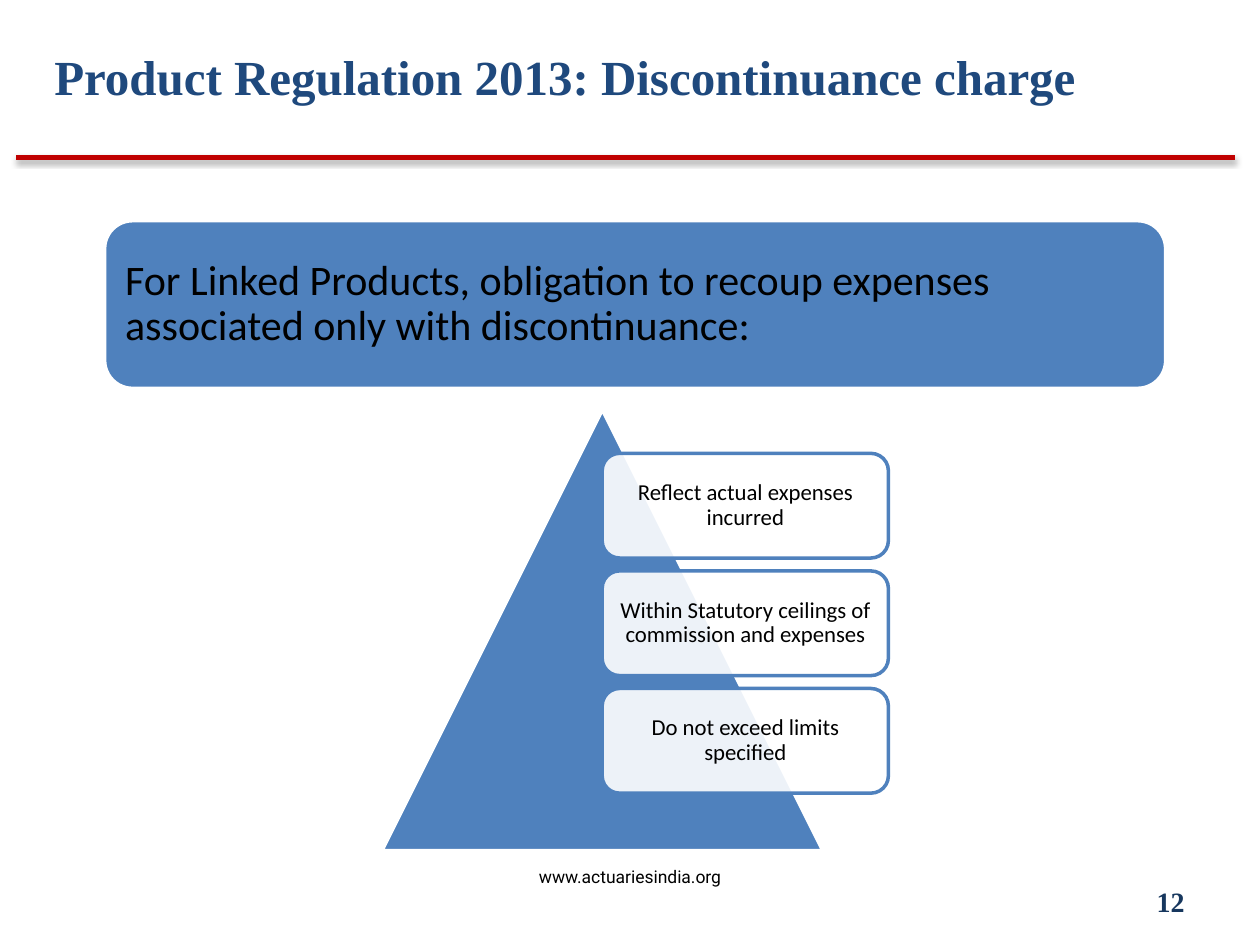
"""Build the slide on discontinuance charges under Product Regulation 2013."""
import pptx
import pptx.dml.color
import pptx.enum.shapes
import pptx.enum.text
import pptx.oxml
import pptx.oxml.ns
import pptx.util

Cm, Pt = pptx.util.Cm, pptx.util.Pt
SHAPE = pptx.enum.shapes.MSO_SHAPE
ALIGN = pptx.enum.text.PP_ALIGN
qn = pptx.oxml.ns.qn

HEADING = "Product Regulation 2013: Discontinuance charge"
OBLIGATION = ("For Linked Products, obligation to recoup expenses "
              "associated only with discontinuance:")
CONDITIONS = [
    "Reflect actual expenses incurred",
    "Within Statutory ceilings of commission and expenses",
    "Do not exceed limits specified",
]
WEBSITE = "www.actuariesindia.org"
PAGE = "12"

COLORS = {"blue": "4F81BD", "white": "FFFFFF", "black": "000000",
          "rule": "C00000", "heading": "1F497D", "page": "17375E"}
CARD_LEFT, CARD_TOP, CARD_WIDTH, CARD_HEIGHT, CARD_GAP = 12.14, 9.14, 5.77, 2.11, 0.26
SHADOW = (
    f'<a:effectLst {pptx.oxml.ns.nsdecls("a")}>'
    '<a:outerShdw blurRad="39370" dist="20320" dir="5400000" rotWithShape="0">'
    '<a:srgbClr val="000000"><a:alpha val="38000"/></a:srgbClr>'
    '</a:outerShdw></a:effectLst>'
)


def rgb(name):
    return pptx.dml.color.RGBColor.from_string(COLORS[name])


def write(holder, text, size, font="Calibri", color="black", bold=False,
          align=ALIGN.LEFT, spacing=None, inset=None):
    frame = holder.text_frame
    frame.word_wrap = True
    frame.auto_size = pptx.enum.text.MSO_AUTO_SIZE.NONE
    frame.vertical_anchor = pptx.enum.text.MSO_ANCHOR.MIDDLE
    if inset is not None:
        frame.margin_left = frame.margin_right = Cm(inset)
        frame.margin_top = frame.margin_bottom = Cm(inset)
    paragraph = frame.paragraphs[0]
    paragraph.alignment = align
    paragraph.line_spacing = spacing
    run = paragraph.add_run()
    run.text = text
    run.font.name, run.font.size, run.font.bold = font, Pt(size), bold
    run.font.color.rgb = rgb(color)


def add_block(slide, kind, box, fill, line, opacity=None):
    block = slide.shapes.add_shape(kind, *map(Cm, box))
    block.shadow.inherit = False
    block.fill.solid()
    block.fill.fore_color.rgb = rgb(fill)
    block.line.color.rgb = rgb(line)
    block.line.width = Pt(2)
    if opacity is not None:
        fill_color = block.fill._xPr.find(qn("a:solidFill"))[0]
        fill_color.append(pptx.oxml.parse_xml(
            f'<a:alpha {pptx.oxml.ns.nsdecls("a")} val="{opacity * 1000}"/>'))
    return block


def main():
    deck = pptx.Presentation()
    deck.slide_width, deck.slide_height = Cm(25.4), Cm(19.05)
    slide = deck.slides.add_slide(deck.slide_layouts[5])

    heading = slide.shapes.title
    heading.left, heading.top, heading.width, heading.height = map(
        Cm, (0.84, -0.05, 22.86, 3.18))
    write(heading, HEADING, 28, font="Times New Roman", color="heading", bold=True)

    rule = slide.shapes.add_connector(
        pptx.enum.shapes.MSO_CONNECTOR.STRAIGHT, *map(Cm, (0.33, 3.18, 24.89, 3.18)))
    rule.line.color.rgb = rgb("rule")
    rule.line.width = Pt(3)
    rule._element.spPr.append(pptx.oxml.parse_xml(SHADOW))

    add_block(slide, SHAPE.ISOSCELES_TRIANGLE, (7.7, 8.26, 8.89, 8.89), "blue", "white")
    for index, condition in enumerate(CONDITIONS):
        top = CARD_TOP + index * (CARD_HEIGHT + CARD_GAP)
        card = add_block(slide, SHAPE.ROUNDED_RECTANGLE,
                         (CARD_LEFT, top, CARD_WIDTH, CARD_HEIGHT),
                         "white", "blue", opacity=90)
        write(card, condition, 13, align=ALIGN.CENTER, spacing=0.9, inset=0.13)

    obligation = add_block(slide, SHAPE.ROUNDED_RECTANGLE,
                           (2.11, 4.45, 21.39, 3.38), "blue", "white")
    write(obligation, OBLIGATION, 24, spacing=0.9, inset=0.25)

    website = slide.shapes.add_textbox(*map(Cm, (0, 17.17, 25.4, 1.02)))
    write(website, WEBSITE, 10, font="Roboto", align=ALIGN.CENTER)
    page = slide.shapes.add_textbox(*map(Cm, (18.21, 17.65, 5.92, 1.02)))
    write(page, PAGE, 16, font="Times New Roman", color="page", bold=True,
          align=ALIGN.RIGHT)

    deck.save("out.pptx")


if __name__ == "__main__":
    main()
